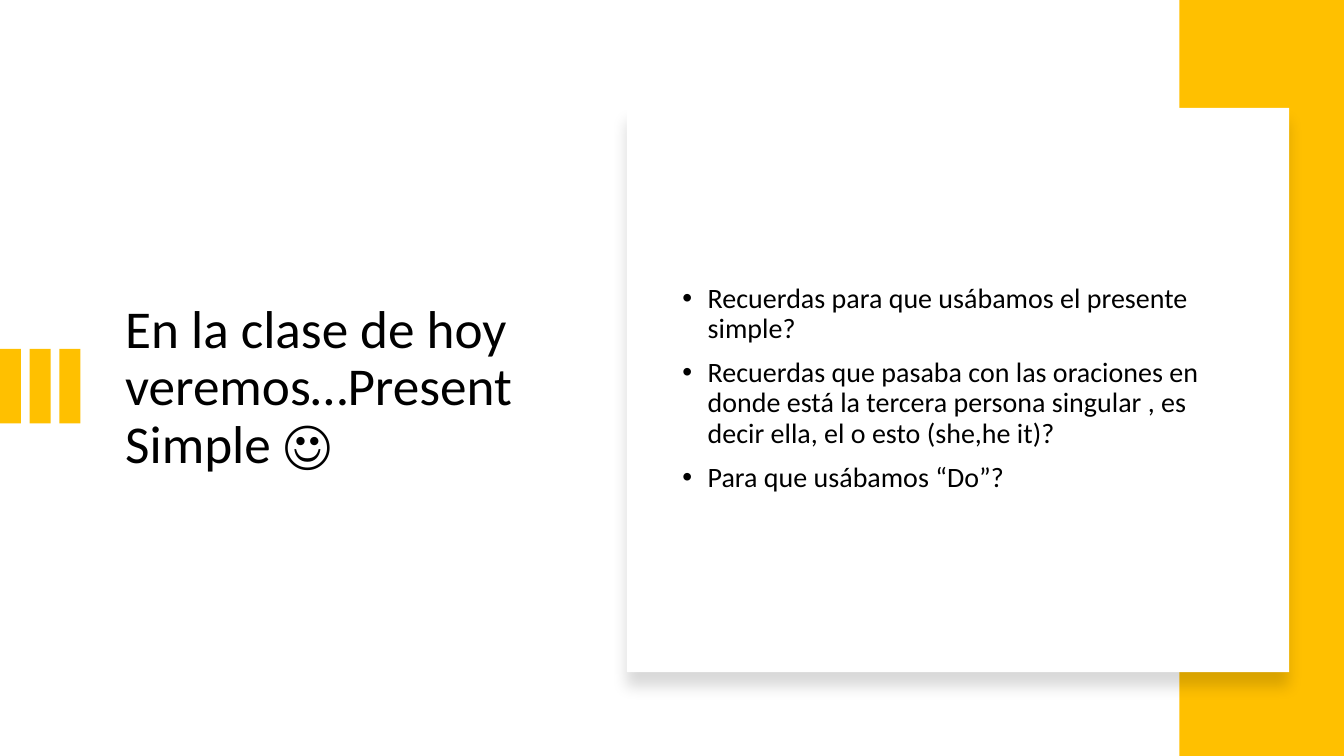
from lxml.etree import SubElement
from pptx import Presentation
from pptx.dml.color import RGBColor
from pptx.enum.shapes import MSO_SHAPE
from pptx.enum.text import MSO_ANCHOR, MSO_AUTO_SIZE, PP_ALIGN
from pptx.oxml.ns import qn
from pptx.util import Cm, Pt

AMBER = RGBColor(0xFF, 0xC0, 0x00)
WHITE = RGBColor(0xFF, 0xFF, 0xFF)
BLACK = RGBColor(0x00, 0x00, 0x00)

WIDTH, HEIGHT = 33.87, 19.05
BAND_LEFT = 29.72
TEXT_TOP, TEXT_HEIGHT = 3.71, 12.17
BAR_WIDTH, BAR_STEP = 0.53, 0.75

TITLE = "En la clase de hoy veremos…Present Simple ☺"
QUESTIONS = [
    "Recuerdas para que usábamos el presente simple?",
    "Recuerdas que pasaba con las oraciones en donde está la tercera persona "
    "singular , es decir ella, el o esto (she,he it)?",
    "Para que usábamos “Do”?",
]


def set_all(target, values):
    for name, value in values.items():
        setattr(target, name, value)


class SlideBuilder:
    frame_format = {"word_wrap": True, "auto_size": MSO_AUTO_SIZE.NONE,
                    "vertical_anchor": MSO_ANCHOR.MIDDLE}
    paragraph_format = {"alignment": PP_ALIGN.LEFT, "line_spacing": 0.9}
    font_format = {"name": "Calibri", "bold": False}

    def __init__(self, prs):
        self.s = prs.slides.add_slide(prs.slide_layouts[1])

    def rect(self, shapes, box, color):
        sp = shapes.add_shape(MSO_SHAPE.RECTANGLE, *map(Cm, box))
        sp.shadow.inherit = False
        sp.fill.solid()
        sp.fill.fore_color.rgb = color
        sp.line.fill.background()
        return sp

    def card(self, box):
        """Add a white panel with a soft shadow below it."""
        sp = self.rect(self.s.shapes, box, WHITE)
        effects = sp._element.spPr.find(qn("a:effectLst"))
        shadow = SubElement(effects, qn("a:outerShdw"), blurRad=str(Pt(11)),
                            dist=str(Pt(10)), dir="5400000", algn="t", rotWithShape="0")
        color = SubElement(shadow, qn("a:srgbClr"), val=str(BLACK))
        SubElement(color, qn("a:alpha"), val="15000")

    def text(self, sp, box, lines, size, space_before=0, bullet=False):
        """Place a placeholder in front of the shapes and fill it."""
        self.s.shapes._spTree.append(sp._element)
        set_all(sp, dict(zip(("left", "top", "width", "height"), map(Cm, box))))
        tf = sp.text_frame
        set_all(tf, self.frame_format)
        tf.text = "\n".join(lines)
        for p in tf.paragraphs:
            set_all(p, {**self.paragraph_format, "space_before": Pt(space_before)})
            set_all(p.runs[0].font, {**self.font_format, "size": Pt(size)})
            p.runs[0].font.color.rgb = BLACK
            if bullet:
                pPr = p._p.get_or_add_pPr()
                pPr.set("marL", str(Cm(0.64)))
                pPr.set("indent", str(-Cm(0.64)))
                SubElement(pPr, qn("a:buFont"), typeface="Arial")
                SubElement(pPr, qn("a:buChar"), char="•")


def main():
    prs = Presentation()
    set_all(prs, {"slide_width": Cm(WIDTH), "slide_height": Cm(HEIGHT)})
    builder = SlideBuilder(prs)
    shapes = builder.s.shapes
    title, body = shapes.title, builder.s.placeholders[1]

    bars = shapes.add_group_shape()
    for i in range(3):
        builder.rect(bars.shapes, (i * BAR_STEP, 8.79, BAR_WIDTH, 1.88), AMBER)
    builder.rect(shapes, (BAND_LEFT, 0, WIDTH - BAND_LEFT, HEIGHT), AMBER)
    builder.card((15.8, 2.72, 16.69, 14.22))

    builder.text(title, (2.9, TEXT_TOP, 10.82, TEXT_HEIGHT), [TITLE], 38)
    builder.text(body, (16.94, TEXT_TOP, 14.61, TEXT_HEIGHT), QUESTIONS, 20,
                 space_before=10, bullet=True)
    prs.save("out.pptx")


if __name__ == "__main__":
    main()
